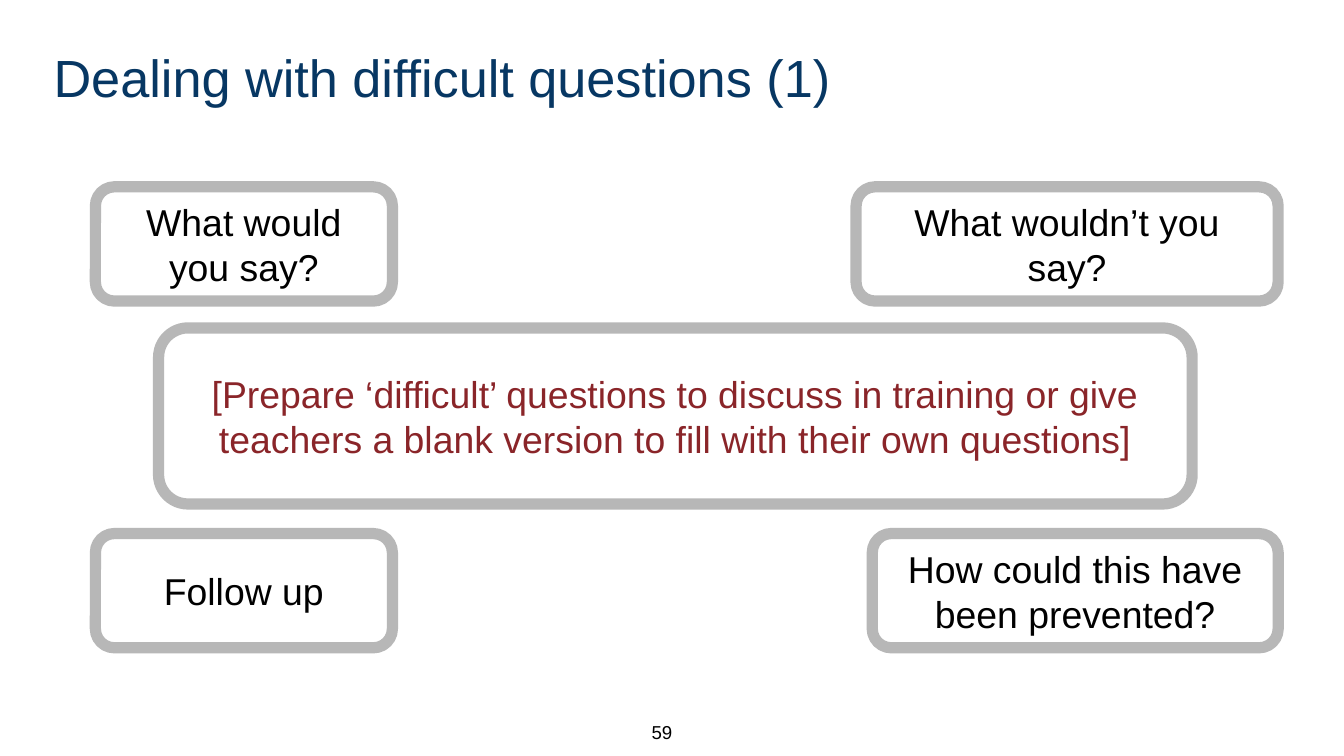
from dataclasses import dataclass

from pptx import Presentation
from pptx.dml.color import RGBColor
from pptx.enum.shapes import MSO_SHAPE
from pptx.enum.text import MSO_ANCHOR, PP_ALIGN
from pptx.util import Inches, Pt

ROUNDED = MSO_SHAPE.ROUNDED_RECTANGLE
TOP, MIDDLE = MSO_ANCHOR.TOP, MSO_ANCHOR.MIDDLE
LEFT, CENTER, RIGHT = PP_ALIGN.LEFT, PP_ALIGN.CENTER, PP_ALIGN.RIGHT


@dataclass(frozen=True)
class Theme:
    """Colours, font and type sizes of the slide."""
    font: str = "Arial"
    title: str = "073763"
    text: str = "000000"
    prompt: str = "8A2529"
    border: str = "B7B7B7"
    title_size: int = 28
    body_size: int = 20
    number_size: int = 10
    border_width: int = 6
    inset: float = 0.1


THEME = Theme()


def write_text(shape, text, size=THEME.body_size, color=THEME.text,
               align=CENTER, anchor=MIDDLE):
    """Write one formatted paragraph into a shape."""
    frame = shape.text_frame
    frame.word_wrap = True
    frame.vertical_anchor = anchor
    frame.margin_left = frame.margin_right = Inches(THEME.inset)
    frame.margin_top = frame.margin_bottom = Inches(THEME.inset)
    paragraph = frame.paragraphs[0]
    paragraph.alignment = align
    run = paragraph.add_run()
    run.text = text
    run.font.name = THEME.font
    run.font.size = Pt(size)
    run.font.color.rgb = RGBColor.from_string(color)


def add_label(slide, box, text, **text_format):
    """Add a text box in the given box."""
    shape = slide.shapes.add_textbox(*map(Inches, box))
    write_text(shape, text, **text_format)


def add_card(slide, box, text, **text_format):
    """Add an outlined rounded card in the given box."""
    shape = slide.shapes.add_shape(ROUNDED, *map(Inches, box))
    shape.shadow.inherit = False
    shape.fill.background()
    shape.line.color.rgb = RGBColor.from_string(THEME.border)
    shape.line.width = Pt(THEME.border_width)
    write_text(shape, text, **text_format)


def add_question_board(slide, box):
    """Add the central prompt with a question card at each corner."""
    left, top, width, height = box
    card_height = 0.85
    left_width = 2.21
    add_card(slide, (left + 0.47, top + 1.05, 7.69, 1.31),
             "[Prepare ‘difficult’ questions to discuss in training or give "
             "teachers a blank version to fill with their own questions]",
             color=THEME.prompt)
    rows = (
        (top, "What would you say?", "What wouldn’t you say?", 3.14),
        (top + height - card_height, "Follow up",
         "How could this have been prevented?", 3.02),
    )
    for row_top, left_text, right_text, right_width in rows:
        right_left = left + width - right_width
        add_card(slide, (left, row_top, left_width, card_height), left_text)
        add_card(slide, (right_left, row_top, right_width, card_height),
                 right_text)


def main():
    """Build and save the presentation."""
    presentation = Presentation()
    presentation.slide_width = Inches(10)
    presentation.slide_height = Inches(10 * 9 / 16)
    slide = presentation.slides.add_slide(presentation.slide_layouts[6])
    add_label(slide, (0.3, 0.24, 8.48, 0.63),
              "Dealing with difficult questions (1)", size=THEME.title_size,
              color=THEME.title, align=LEFT, anchor=TOP)
    add_question_board(slide, (0.71, 1.39, 8.8, 3.43))
    add_label(slide, (4.71, 5.26, 0.39, 0.37), "59",
              size=THEME.number_size, align=RIGHT)
    presentation.save("out.pptx")


if __name__ == "__main__":
    main()
